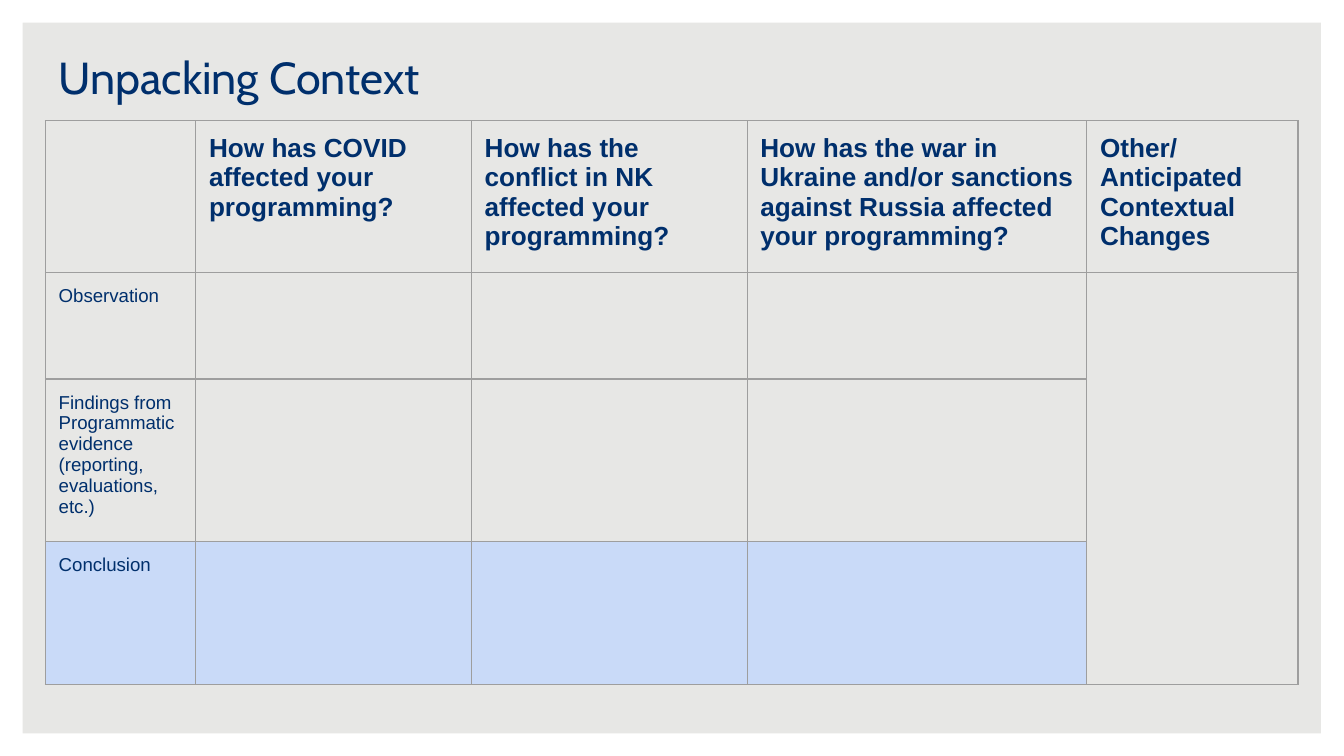
import pptx
import pptx.util
import pptx.dml.color
import pptx.enum.shapes
import pptx.enum.text
import pptx.oxml
import pptx.oxml.ns

Cm = pptx.util.Cm
Pt = pptx.util.Pt

HUES = {"paper": "E7E7E5", "white": "FFFFFF", "navy": "002F6C",
        "sky": "C9DAF8", "rule": "9E9E9E"}
PAD = 0.25
COLS = [2.84, 5.21, 5.21, 6.42, 3.99]
ROWS = [2.71, 2.01, 3.07, 2.7]
HEADS = ["",
         "How has COVID affected your programming?",
         "How has the conflict in NK affected your programming?",
         "How has the war in Ukraine and/or sanctions against Russia "
         "affected your programming?",
         "Other/ Anticipated Contextual Changes"]
SIDES = ["Observation",
         "Findings from Programmatic evidence (reporting, evaluations, etc.)",
         "Conclusion"]


def hue(name):
    return pptx.dml.color.RGBColor.from_string(HUES[name])


def paint(fill, name):
    fill.solid()
    fill.fore_color.rgb = hue(name)


def write(frame, text, size=10, font="Arial", bold=False, color="navy"):
    frame.word_wrap = True
    run = frame.paragraphs[0].add_run()
    run.text = text
    run.font.size = Pt(size)
    run.font.name = font
    run.font.bold = bold
    run.font.color.rgb = hue(color)


def rule(cell, width=0.75):
    """Draw a line on all four sides of a cell."""
    props = cell._tc.get_or_add_tcPr()
    for i, side in enumerate("LRTB"):
        line = pptx.oxml.parse_xml(
            f'<a:ln{side} {pptx.oxml.ns.nsdecls("a")} w="{Pt(width)}">'
            f'<a:solidFill><a:srgbClr val="{HUES["rule"]}"/></a:solidFill>'
            f'</a:ln{side}>')
        props.insert(i, line)


def border(slide, x, y, w, h):
    frame = slide.shapes.add_shape(
        pptx.enum.shapes.MSO_SHAPE.FRAME, Cm(x), Cm(y), Cm(w), Cm(h))
    frame.adjustments[0] = 0.03
    frame.shadow.inherit = False
    paint(frame.fill, "white")
    frame.line.fill.background()


def title(slide, x, y, w, h):
    box = slide.shapes.add_textbox(Cm(x), Cm(y), Cm(w), Cm(h))
    frame = box.text_frame
    frame.margin_left = frame.margin_right = Cm(PAD)
    frame.margin_top = frame.margin_bottom = Cm(PAD)
    frame.vertical_anchor = pptx.enum.text.MSO_ANCHOR.TOP
    write(frame, "Unpacking Context", size=24, font="Cabin")


def grid(slide, x, y, w, h):
    table = slide.shapes.add_table(
        len(ROWS), len(COLS), Cm(x), Cm(y), Cm(w), Cm(h)).table
    table.first_row = table.horz_banding = False
    for col, part in zip(table.columns, COLS):
        col.width = Cm(w * part / sum(COLS))
    for row, part in zip(table.rows, ROWS):
        row.height = Cm(h * part / sum(ROWS))

    last = len(COLS) - 1
    end = len(ROWS) - 1
    for r in range(len(ROWS)):
        for c in range(len(COLS)):
            cell = table.cell(r, c)
            cell.margin_left = cell.margin_right = Cm(PAD)
            cell.margin_top = cell.margin_bottom = Cm(PAD)
            if r == end and c < last:
                paint(cell.fill, "sky")
            else:
                cell.fill.background()
            rule(cell)
    table.cell(1, last).merge(table.cell(end, last))

    for c, text in enumerate(HEADS):
        if text:
            write(table.cell(0, c).text_frame, text, size=14, bold=True)
    for r, text in enumerate(SIDES, 1):
        write(table.cell(r, 0).text_frame, text)


def main():
    deck = pptx.Presentation()
    deck.slide_width, deck.slide_height = Cm(25.4), Cm(14.29)
    slide = deck.slides.add_slide(deck.slide_layouts[6])
    paint(slide.background.fill, "paper")
    border(slide, 0, 0, 25.4, 14.29)
    title(slide, 0.86, 0.69, 23.67, 1.6)
    grid(slide, 0.86, 2.28, 23.67, 10.49)
    deck.save("out.pptx")


if __name__ == "__main__":
    main()
